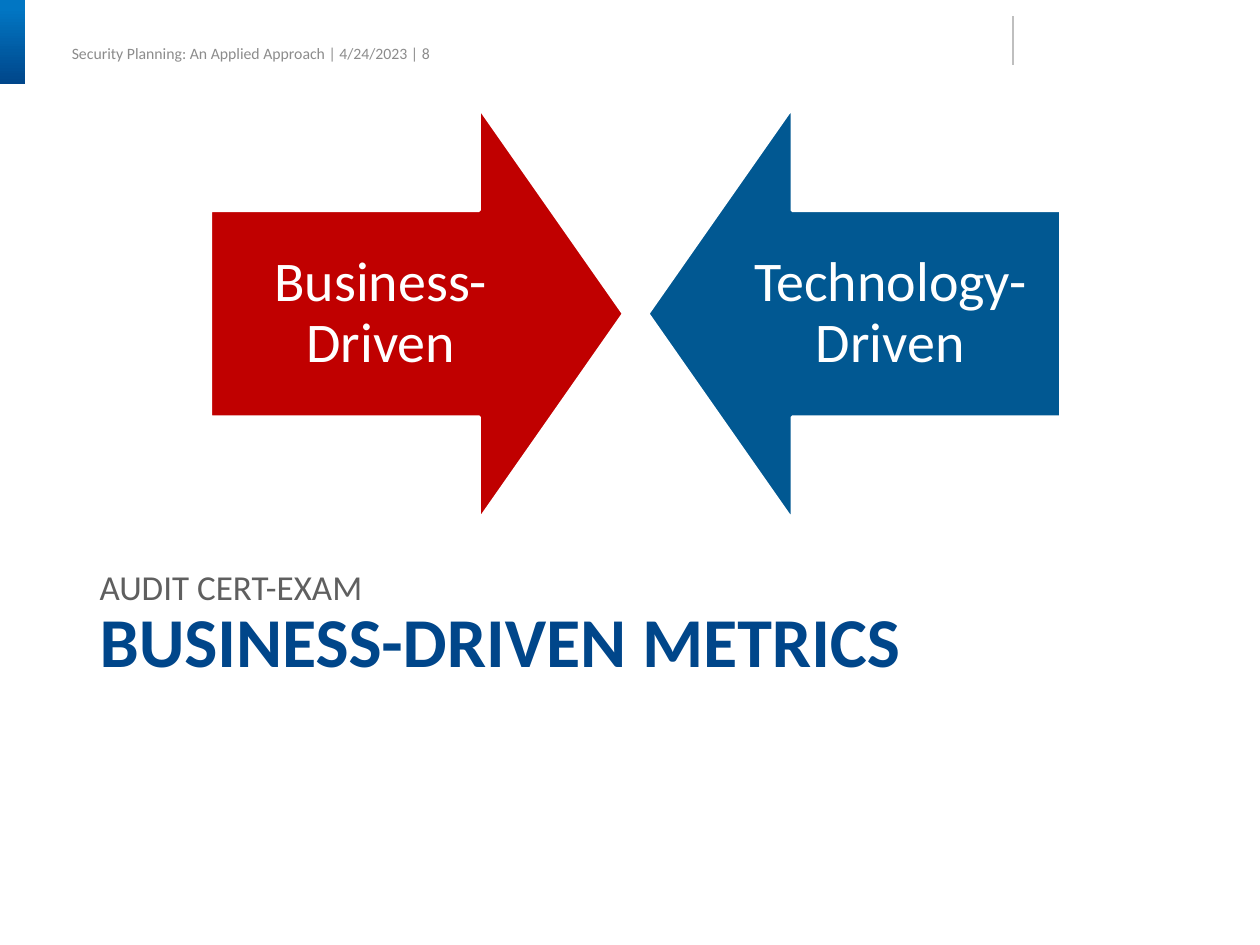
from dataclasses import dataclass

from lxml.etree import SubElement
from pptx import Presentation
from pptx.dml.color import RGBColor
from pptx.enum.shapes import MSO_CONNECTOR as Connector, MSO_SHAPE as Shape
from pptx.enum.text import MSO_ANCHOR as Anchor, MSO_AUTO_SIZE as AutoSize, PP_ALIGN as Align
from pptx.oxml.ns import qn
from pptx.util import Pt

PX = 9144


@dataclass(frozen=True)
class Theme:
    font: str = "Calibri"
    white: str = "FFFFFF"
    navy: str = "00468A"
    sky: str = "0176C3"
    red: str = "C00000"
    blue: str = "015892"
    slate: str = "5F5F5F"
    muted: str = "8C8C8C"
    rule: str = "BFBFBF"
    header_size: int = 9
    subtitle_size: int = 20
    arrow_size: int = 32
    title_size: int = 40


THEME = Theme()


def rgb(value):
    return RGBColor.from_string(value)


def emu(*lengths):
    return [length * PX for length in lengths]


def write(box, text, size, color, bold=False, align=Align.LEFT, anchor=Anchor.TOP,
          insets=(0, 0, 0, 0), wrap=True, spacing=None):
    frame = box.text_frame
    frame.auto_size = AutoSize.NONE
    frame.word_wrap = wrap
    frame.vertical_anchor = anchor
    (frame.margin_left, frame.margin_top,
     frame.margin_right, frame.margin_bottom) = emu(*insets)
    para = frame.paragraphs[0]
    para.alignment = align
    para.line_spacing = spacing
    span = para.add_run()
    span.text = text
    span.font.name = THEME.font
    span.font.size = Pt(size)
    span.font.bold = bold
    span.font.color.rgb = rgb(color)


def add_header(page, left, top, width, height):
    accent = page.shapes.add_shape(Shape.RECTANGLE, *emu(left, top, 20, height))
    accent.shadow.inherit = False
    accent.line.fill.background()
    accent.fill.gradient()
    accent.fill.gradient_angle = 270
    for stop, position, color in zip(accent.fill.gradient_stops, (0.1, 1), (THEME.sky, THEME.navy)):
        stop.position = position
        stop.color.rgb = rgb(color)

    label = page.shapes.add_textbox(*emu(left + 57, top + 23, 304, 23))
    write(label, "Security Planning: An Applied Approach | 4/24/2023 | 8",
          THEME.header_size, THEME.muted, anchor=Anchor.MIDDLE,
          insets=(0, 20, 0, 4), wrap=False)

    rule_x = left + width - 196
    rule = page.shapes.add_connector(
        Connector.STRAIGHT, *emu(rule_x, top + 13, rule_x, top + 52))
    rule.line.color.rgb = rgb(THEME.rule)
    rule.line.width = Pt(0.75)
    SubElement(rule.element.spPr, qn("a:effectLst"))


def add_arrows(page, left, top, width, height):
    arrows = (
        (Shape.RIGHT_ARROW, left, "Business-Driven", THEME.red),
        (Shape.LEFT_ARROW, left + width - height, "Technology-Driven", THEME.blue),
    )
    for kind, x, text, color in arrows:
        arrow = page.shapes.add_shape(kind, *emu(x, top, height, height))
        arrow.adjustments[0] = 0.5
        arrow.adjustments[1] = 0.35
        arrow.shadow.inherit = False
        arrow.fill.solid()
        arrow.fill.fore_color.rgb = rgb(color)
        arrow.line.color.rgb = rgb(THEME.white)
        arrow.line.width = Pt(2)
        write(arrow, text, THEME.arrow_size, THEME.white, align=Align.CENTER,
              anchor=Anchor.MIDDLE, insets=(25, 25, 25, 25), spacing=0.9)


def add_heading(page, left, top, width, height):
    title_height = 61
    subtitle_height = height - title_height
    subtitle = page.shapes.add_textbox(*emu(left, top, width, subtitle_height))
    write(subtitle, "AUDIT CERT-EXAM", THEME.subtitle_size, THEME.slate, anchor=Anchor.BOTTOM)

    title = page.shapes.title
    title.left, title.top, title.width, title.height = emu(
        left, top + subtitle_height, width, title_height)
    write(title, "BUSINESS-DRIVEN METRICS", THEME.title_size, THEME.navy,
          bold=True, spacing=0.9)


def main():
    deck = Presentation()
    deck.slide_width, deck.slide_height = emu(1000, 750)
    page = deck.slides.add_slide(deck.slide_layouts[5])
    add_header(page, 0, 0, 1000, 67)
    add_heading(page, 79, 318, 850, 225)
    add_arrows(page, 167, 85, 675, 328)
    deck.save("out.pptx")


if __name__ == "__main__":
    main()
